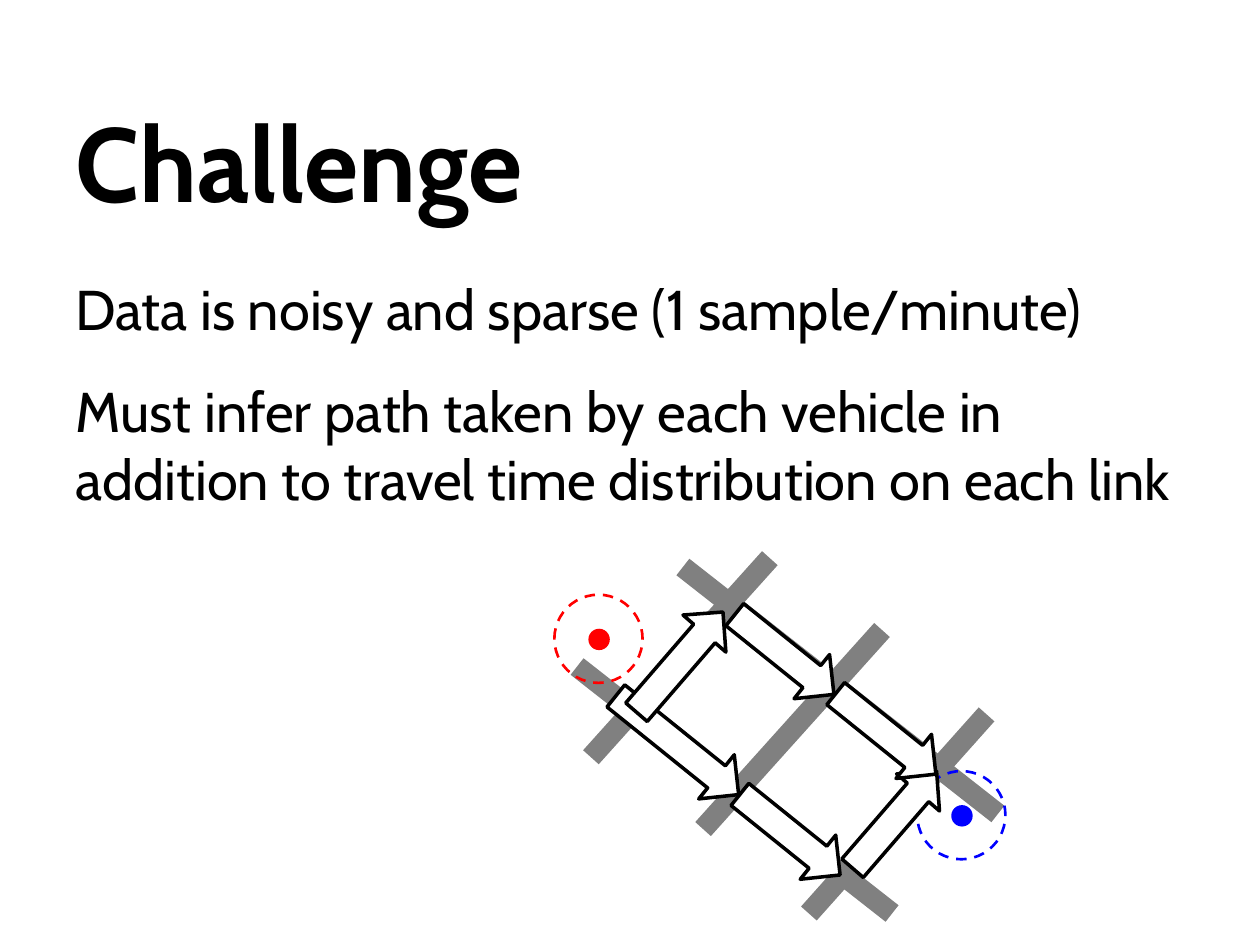
"""Builds the slide on inferring vehicle paths from sparse samples."""
from dataclasses import dataclass

from pptx import Presentation
from pptx import util as u
from pptx.dml.color import RGBColor
from pptx.enum import dml, shapes, text
from pptx.oxml.ns import qn
from lxml import etree

PX = 9144
WIDTH, HEIGHT = 1000, 750


@dataclass(frozen=True)
class Theme:
    """Font, type sizes, colours and line widths."""
    font: str = "Cabin"
    title: int = 60
    body: int = 32
    gap: int = 20
    ink: str = "000000"
    paper: str = "FFFFFF"
    road: str = "808080"
    start: str = "FF0000"
    end: str = "0000FF"
    road_width: float = 12
    halo_width: float = 1.5
    arrow_width: float = 2


def px(*lengths):
    """Turns lengths in px into EMU."""
    return [u.Emu(n * PX) for n in lengths]


class SlideBuilder:
    """Draws styled elements on one slide."""

    def __init__(self, slide, theme):
        """Keeps the slide and its theme."""
        self.s, self.theme = slide, theme

    def style(self, p, size, bold=False):
        """Formats a left-aligned paragraph."""
        p.alignment = text.PP_ALIGN.LEFT
        p.font.name, p.font.size, p.font.bold = self.theme.font, u.Pt(size), bold
        p.font.color.rgb = RGBColor.from_string(self.theme.ink)

    def title(self, words, box):
        """Places and formats the title placeholder."""
        sp = self.s.shapes.title
        sp.left, sp.top, sp.width, sp.height = px(*box)
        tf = sp.text_frame
        tf.text = words
        tf.auto_size = text.MSO_AUTO_SIZE.NONE
        tf.vertical_anchor = text.MSO_ANCHOR.MIDDLE
        self.style(tf.paragraphs[0], self.theme.title, bold=True)

    def body(self, lines, box):
        """Adds a text box with one paragraph per line."""
        tf = self.s.shapes.add_textbox(*px(*box)).text_frame
        tf.word_wrap = True
        tf.text = "\n".join(lines)
        for p in tf.paragraphs:
            p.space_before = u.Pt(self.theme.gap)
            self.style(p, self.theme.body)

    def road(self, *ends):
        """Adds a thick straight road."""
        line = self.s.shapes.add_connector(shapes.MSO_CONNECTOR.STRAIGHT, *px(*ends))
        line.line.color.rgb = RGBColor.from_string(self.theme.road)
        line.line.width = u.Pt(self.theme.road_width)
        etree.SubElement(line._element.spPr, qn("a:effectLst"))

    def shape(self, kind, box, fill=None, line=None, width=0):
        """Adds a preset shape with an optional fill and outline."""
        sp = self.s.shapes.add_shape(kind, *px(*box))
        sp.shadow.inherit = False
        if fill:
            sp.fill.solid()
            sp.fill.fore_color.rgb = RGBColor.from_string(fill)
        else:
            sp.fill.background()
        if line:
            sp.line.color.rgb = RGBColor.from_string(line)
            sp.line.width = u.Pt(width)
        else:
            sp.line.fill.background()
        return sp

    def sample(self, x, y, color):
        """Adds a dot inside a dashed circle of uncertainty."""
        oval = shapes.MSO_SHAPE.OVAL
        self.shape(oval, (x - 8, y - 8, 17, 17), fill=color)
        halo = self.shape(oval, (x - 35, y - 35, 70, 70), line=color,
                          width=self.theme.halo_width)
        halo.line.dash_style = dml.MSO_LINE.DASH

    def arrow(self, left, top, length, angle):
        """Adds a turned block arrow along a link."""
        sp = self.shape(shapes.MSO_SHAPE.RIGHT_ARROW, (left, top, length, 45),
                        self.theme.paper, self.theme.ink, self.theme.arrow_width)
        sp.rotation = angle


def main():
    """Builds and saves the slide."""
    prs = Presentation()
    prs.slide_width, prs.slide_height = px(WIDTH, HEIGHT)
    theme = Theme()
    b = SlideBuilder(prs.slides.add_slide(prs.slide_layouts[5]), theme)
    b.title("Challenge", (50, 65, 900, 125))
    b.body(["Data is noisy and sparse (1 sample/minute)",
            "Must infer path taken by each vehicle in addition to travel time "
            "distribution on each link"], (50, 213, 900, 462))

    for ends in [(458, 529, 708, 725), (558, 658, 700, 500), (542, 450, 792, 646),
                 (642, 725, 783, 567), (469, 601, 611, 443)]:
        b.road(*ends)

    b.sample(475, 507, theme.start)
    b.sample(763, 647, theme.end)

    down, up = 38.8, 310.8
    for link in [(475, 569, 125, down), (576, 640, 102, down), (659, 628, 102, up),
                 (487, 503, 105, up), (572, 497, 101, down), (652, 560, 102, down)]:
        b.arrow(*link)
    prs.save("out.pptx")


if __name__ == "__main__":
    main()
